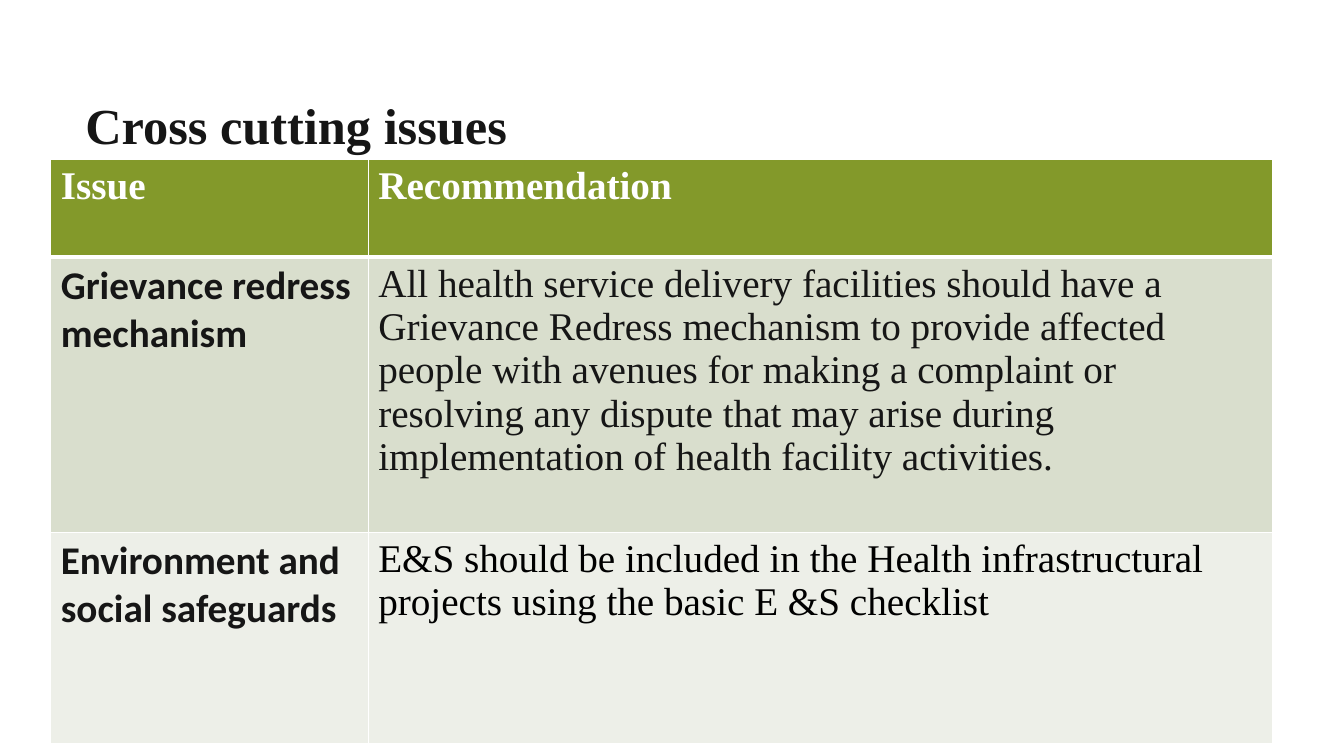
import pptx
import pptx.util
import pptx.dml.color
import pptx.enum.text
import pptx.oxml
import pptx.oxml.ns
from dataclasses import dataclass
from pptx.util import Cm, Pt


@dataclass(frozen=True)
class Theme:
    serif: str = "Times New Roman"
    sans: str = "Calibri"
    title_size: int = 36
    table_size: int = 28
    ink: str = "161616"
    black: str = "000000"
    white: str = "FFFFFF"
    header_fill: str = "83992A"
    row_fills: tuple = ("D9DECD", "EDEFE8")


theme = Theme()


def style_text(para, font, size, color, bold):
    for span in para.runs:
        span.font.name = font
        span.font.size = Pt(size)
        span.font.bold = bold
        span.font.color.rgb = pptx.dml.color.RGBColor.from_string(color)


def style_cell(cell, fill, bottom_width):
    cell.fill.solid()
    cell.fill.fore_color.rgb = pptx.dml.color.RGBColor.from_string(fill)
    properties = cell._tc.get_or_add_tcPr()
    # Borders come before the fill
    for index, side in enumerate("LRTB"):
        width = Pt(bottom_width if side == "B" else 1)
        properties.insert(index, pptx.oxml.parse_xml(
            f'<a:ln{side} {pptx.oxml.ns.nsdecls("a")} w="{width}"><a:solidFill>'
            f'<a:srgbClr val="{theme.white}"/></a:solidFill></a:ln{side}>'))


deck = pptx.Presentation()
deck.slide_width, deck.slide_height = Cm(33.87), Cm(19.05)
page = deck.slides.add_slide(deck.slide_layouts[6])

# Title
title_box = page.shapes.add_textbox(Cm(1.9), Cm(1.3), Cm(29.95), Cm(2.74))
title_frame = title_box.text_frame
title_frame.word_wrap = True
title_frame.vertical_anchor = pptx.enum.text.MSO_ANCHOR.BOTTOM
title_frame.text = "Cross cutting issues"
title_frame.paragraphs[0].line_spacing = 0.9
style_text(title_frame.paragraphs[0], theme.serif, theme.title_size, theme.ink, True)

# Table contents
header = ("Issue", "Recommendation")
issues = [
    ("Grievance redress mechanism",
     "All health service delivery facilities should have a Grievance Redress mechanism "
     "to provide affected people with avenues for making a complaint or resolving any "
     "dispute that may arise during implementation of health facility activities.",
     theme.ink),
    ("Environment and social safeguards",
     "E&S should be included in the Health infrastructural projects using the basic "
     "E &S checklist",
     theme.black),
]

# Table grid
column_widths = (8.0, 22.78)
row_heights = (2.46, 6.93, 5.33)
table = page.shapes.add_table(
    len(row_heights), len(column_widths), Cm(1.28), Cm(4.02),
    Cm(sum(column_widths)), Cm(sum(row_heights))).table
for column, width in zip(table.columns, column_widths):
    column.width = Cm(width)
for row, height in zip(table.rows, row_heights):
    row.height = Cm(height)

# Header row
for cell, label in zip(table.rows[0].cells, header):
    cell.text_frame.text = label
    style_text(cell.text_frame.paragraphs[0], theme.serif, theme.table_size, theme.white, True)
    style_cell(cell, theme.header_fill, 3)

# Issue rows
for row_index, (issue, recommendation, color) in enumerate(issues, start=1):
    issue_cell, advice_cell = table.rows[row_index].cells
    issue_cell.text_frame.text = issue
    advice_cell.text_frame.text = recommendation
    style_text(issue_cell.text_frame.paragraphs[0], theme.sans, theme.table_size, theme.ink, True)
    style_text(advice_cell.text_frame.paragraphs[0], theme.serif, theme.table_size, color, False)
    for cell in (issue_cell, advice_cell):
        style_cell(cell, theme.row_fills[row_index - 1], 1)
        if row_index == 1:
            # Match the thick rule under the header
            cell._tc.tcPr.find(pptx.oxml.ns.qn("a:lnT")).set("w", str(Pt(3)))

deck.save("out.pptx")
